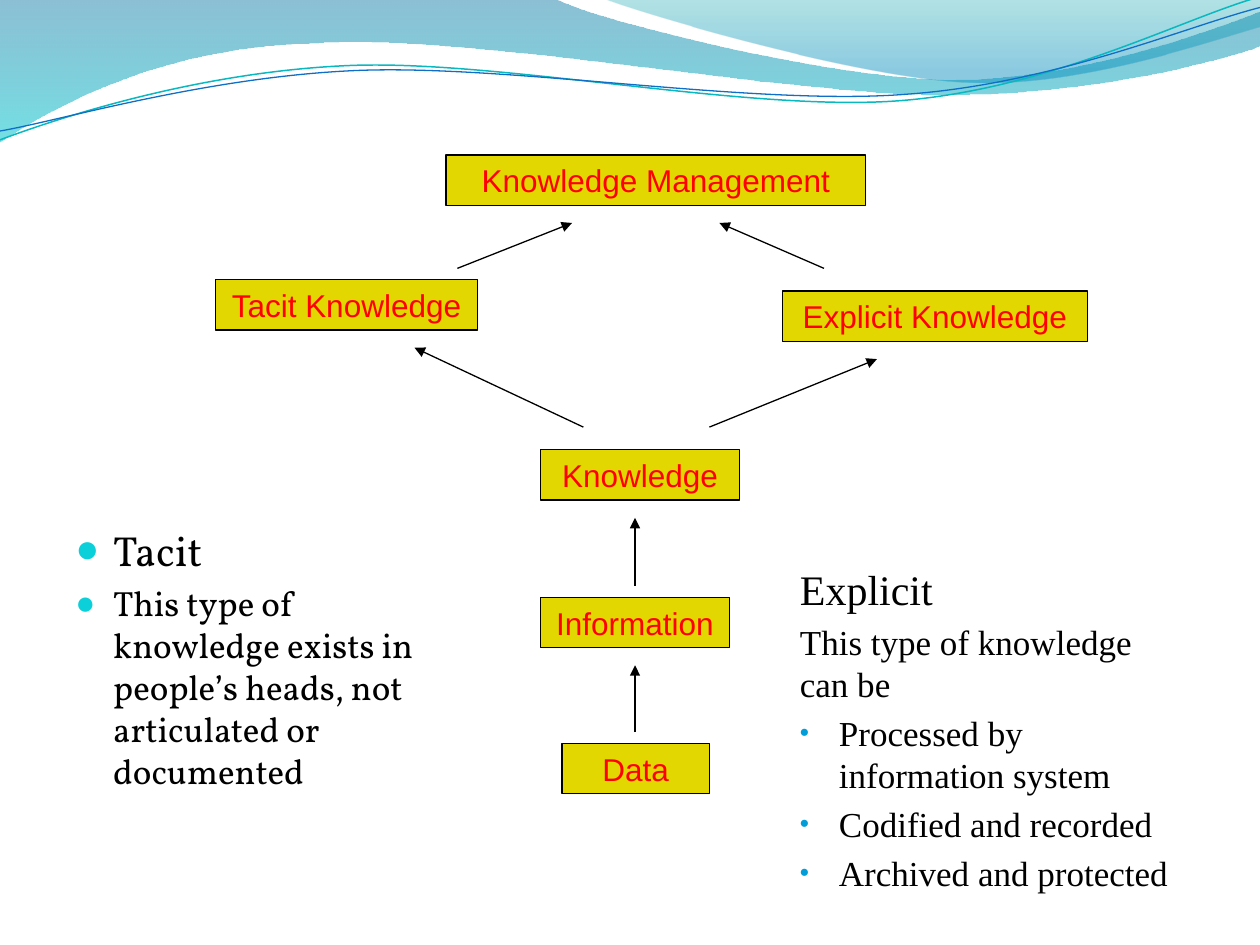
import math

import lxml.etree
import pptx
import pptx.dml.color
import pptx.enum.shapes
import pptx.enum.text
import pptx.oxml.ns
import pptx.util
from pptx.util import Inches

COLORS = {
    "box": "E2D700", "label": "FF0000", "ink": "000000",
    "tacit_bullet": "0BD0D9", "explicit_bullet": "009DD9",
    "teal_line": "0AB8BF", "blue_line": "0F6FC6",
    "band_top": "0074A1", "band_bottom": "00C6CF",
    "corner_top": "00A1A9", "corner_bottom": "008BBF",
}

# Each outline is a start point followed by line ends (2 numbers) or curves (6).
BAND = [(0, 0), (4.4, -0.01), (4.76, 0.17, 6.64, 0.63, 7.58, 0.63),
        (8.53, 0.63, 9.58, 0.26, 10, 0.09), (10.01, 0.36),
        (9.83, 0.44, 8.7, 0.76, 7.46, 0.75), (6.22, 0.75, 3.82, 0.28, 2.57, 0.34),
        (1.29, 0.36, 0.46, 0.83, -0.01, 1.13), (0, 0)]
CORNER = [(4.79, -0.01), (5.09, 0.11, 6.82, 0.62, 7.69, 0.65),
          (8.56, 0.69, 9.61, 0.32, 10, 0.21), (10, 0), (4.79, -0.01)]
TEAL_WAVE = [(0, 1.11), (0.48, 0.93, 1.58, 0.57, 2.77, 0.52),
             (3.95, 0.47, 5.93, 0.89, 7.13, 0.8), (8.33, 0.71, 9.38, 0.15, 9.98, -0.02)]
BLUE_WAVE = [(0, 1.04), (0.47, 0.96, 1.64, 0.61, 2.83, 0.56),
             (4.03, 0.51, 5.97, 0.84, 7.17, 0.75), (8.36, 0.67, 9.41, 0.21, 10, 0.06)]
WAVE_TILT = 357.3

# Places inside the diagram box
BOX_HEIGHT = 0.4
BOXES = [("Knowledge Management", 1.83, 0, 3.33), ("Tacit Knowledge", 0, 0.99, 2.08),
         ("Explicit Knowledge", 4.5, 1.08, 2.42), ("Knowledge", 2.58, 2.34, 1.58),
         ("Information", 2.58, 3.51, 1.5), ("Data", 2.75, 4.67, 1.17)]
ARROWS = [(1.92, 0.9, 2.83, 0.54), (4.83, 0.9, 4, 0.54), (2.92, 2.16, 1.58, 1.53),
          (3.92, 2.16, 5.25, 1.62), (3.33, 4.58, 3.33, 4.05), (3.33, 3.42, 3.33, 2.88)]


def rgb(name):
    return pptx.dml.color.RGBColor.from_string(COLORS[name])


def add_xml(parent, tag, **attributes):
    return lxml.etree.SubElement(parent, pptx.oxml.ns.qn(tag), attributes)


def set_format(target, values):
    for name, value in values.items():
        setattr(target, name, value)


def turn(points, center, degrees):
    cos, sin = math.cos(math.radians(degrees)), math.sin(math.radians(degrees))
    return [(center[0] + (x - center[0]) * cos - (y - center[1]) * sin,
             center[1] + (x - center[0]) * sin + (y - center[1]) * cos)
            for x, y in points]


def add_outline(shapes, left, top, outline, close=False, tilt=0, center=(0, 0)):
    """Build a freeform, joining the three points of each curve into one Bezier."""
    points = [part[i:i + 2] for part in outline for i in range(0, len(part), 2)]
    points = [(left + Inches(x), top + Inches(y))
              for x, y in turn(points, center, -tilt)]
    builder = shapes.build_freeform(*points[0])
    builder.add_line_segments(points[1:], close=close)
    shape = builder.convert_to_shape()
    set_format(shape, {"rotation": tilt})
    shape.shadow.inherit = False
    lines = iter(list(shape._element.iter(pptx.oxml.ns.qn("a:lnTo"))))
    for part in outline[1:]:
        line = next(lines)
        if len(part) == 6:
            curve = lxml.etree.Element(pptx.oxml.ns.qn("a:cubicBezTo"))
            line.addprevious(curve)
            for segment in (line, next(lines), next(lines)):
                curve.append(segment[0])
                segment.getparent().remove(segment)
    return shape


def fill_gradient(shape, stops):
    """Fill from top to bottom with (position, colour, opacity) stops, in percent."""
    shape.line.fill.background()
    shape.fill.gradient()
    gradient = shape._element.spPr.find(pptx.oxml.ns.qn("a:gradFill"))
    for child in list(gradient):
        gradient.remove(child)
    stop_list = add_xml(gradient, "a:gsLst")
    for position, color, opacity in stops:
        stop = add_xml(stop_list, "a:gs", pos=str(position * 1000))
        color_element = add_xml(stop, "a:srgbClr", val=COLORS[color])
        add_xml(color_element, "a:alpha", val=str(opacity * 1000))
    add_xml(gradient, "a:lin", ang="5400000", scaled="0")


def add_header(page, left, top):
    for outline, stops in (
            (BAND, [(0, "band_top", 45), (100, "band_bottom", 55)]),
            (CORNER, [(0, "corner_top", 30), (80, "corner_bottom", 45)])):
        fill_gradient(add_outline(page.shapes, left, top, outline, close=True), stops)
    waves = page.shapes.add_group_shape().shapes
    for outline, color, width, center in (
            (TEAL_WAVE, "teal_line", 0.85, (4.99, 0.58)),
            (BLUE_WAVE, "blue_line", 0.75, (5, 0.59))):
        wave = add_outline(waves, left, top, outline, tilt=WAVE_TILT, center=center)
        wave.fill.background()
        wave.line.color.rgb = rgb(color)
        wave.line.width = pptx.util.Pt(width)


def add_span(para, text, font, size, color):
    span = para.add_run()
    span.text = text
    set_format(span.font, {"name": font, "size": pptx.util.Pt(size)})
    span.font.color.rgb = rgb(color)


def add_label_box(shapes, left, top, width, text):
    box = shapes.add_shape(pptx.enum.shapes.MSO_SHAPE.RECTANGLE,
                           left, top, width, Inches(BOX_HEIGHT))
    box.shadow.inherit = False
    box.fill.solid()
    box.fill.fore_color.rgb = rgb("box")
    box.line.color.rgb = rgb("ink")
    box.line.width = pptx.util.Pt(0.75)
    para = box.text_frame.paragraphs[0]
    para.alignment = pptx.enum.text.PP_ALIGN.CENTER
    add_span(para, text, "Arial", 18, "label")


def add_arrow(shapes, *ends):
    arrow = shapes.add_connector(pptx.enum.shapes.MSO_CONNECTOR.STRAIGHT, *ends)
    arrow.line.color.rgb = rgb("ink")
    arrow.line.width = pptx.util.Pt(0.75)
    add_xml(arrow.line._get_or_add_ln(), "a:tailEnd", type="triangle")
    add_xml(arrow._element.spPr, "a:effectLst")


def add_diagram(page, left, top):
    shapes = page.shapes.add_group_shape().shapes
    for text, x, y, width in BOXES:
        add_label_box(shapes, left + Inches(x), top + Inches(y), Inches(width), text)
    for x1, y1, x2, y2 in ARROWS:
        add_arrow(shapes, left + Inches(x1), top + Inches(y1),
                  left + Inches(x2), top + Inches(y2))


def add_bullet(para, char, color, percent, indent):
    properties = para._p.get_or_add_pPr()
    properties.set("marL", str(Inches(indent)))
    properties.set("indent", str(-Inches(indent)))
    add_xml(add_xml(properties, "a:buClr"), "a:srgbClr", val=COLORS[color])
    add_xml(properties, "a:buSzPct", val=str(percent * 1000))
    add_xml(properties, "a:buFont", typeface="Arial")
    add_xml(properties, "a:buChar", char=char)


def add_notes_column(page, left, top, width, height, font, lines, bullet):
    """Add a heading and its lines; each line is (text, has_bullet)."""
    frame = page.shapes.add_textbox(left, top, width, height).text_frame
    frame.word_wrap = True
    for index, (text, has_bullet) in enumerate(lines):
        para = frame.add_paragraph() if index else frame.paragraphs[0]
        if has_bullet:
            add_bullet(para, **bullet)
        if index:
            para.space_before = pptx.util.Pt(4)
        add_span(para, text, font, 20 if index else 24, "ink")


def main():
    deck = pptx.Presentation()
    set_format(deck, {"slide_width": Inches(10), "slide_height": Inches(7.5)})
    page = deck.slides.add_slide(deck.slide_layouts.get_by_name("Blank"))
    add_header(page, Inches(0), Inches(0))
    add_diagram(page, Inches(1.71), Inches(1.23))
    add_notes_column(
        page, Inches(0.5), Inches(4.11), Inches(3.29), Inches(2.48), "Vollkorn",
        [("Tacit", True),
         ("This type of knowledge exists in people’s heads, "
          "not articulated or documented", True)],
        {"char": "●", "color": "tacit_bullet", "percent": 95, "indent": 0.3})
    add_notes_column(
        page, Inches(6.25), Inches(4.42), Inches(3.25), Inches(2.64), "Times New Roman",
        [("Explicit", False), ("This type of knowledge can be", False),
         ("Processed by information system", True), ("Codified and recorded", True),
         ("Archived and protected", True)],
        {"char": "•", "color": "explicit_bullet", "percent": 75, "indent": 0.31})
    deck.save("out.pptx")


if __name__ == "__main__":
    main()
